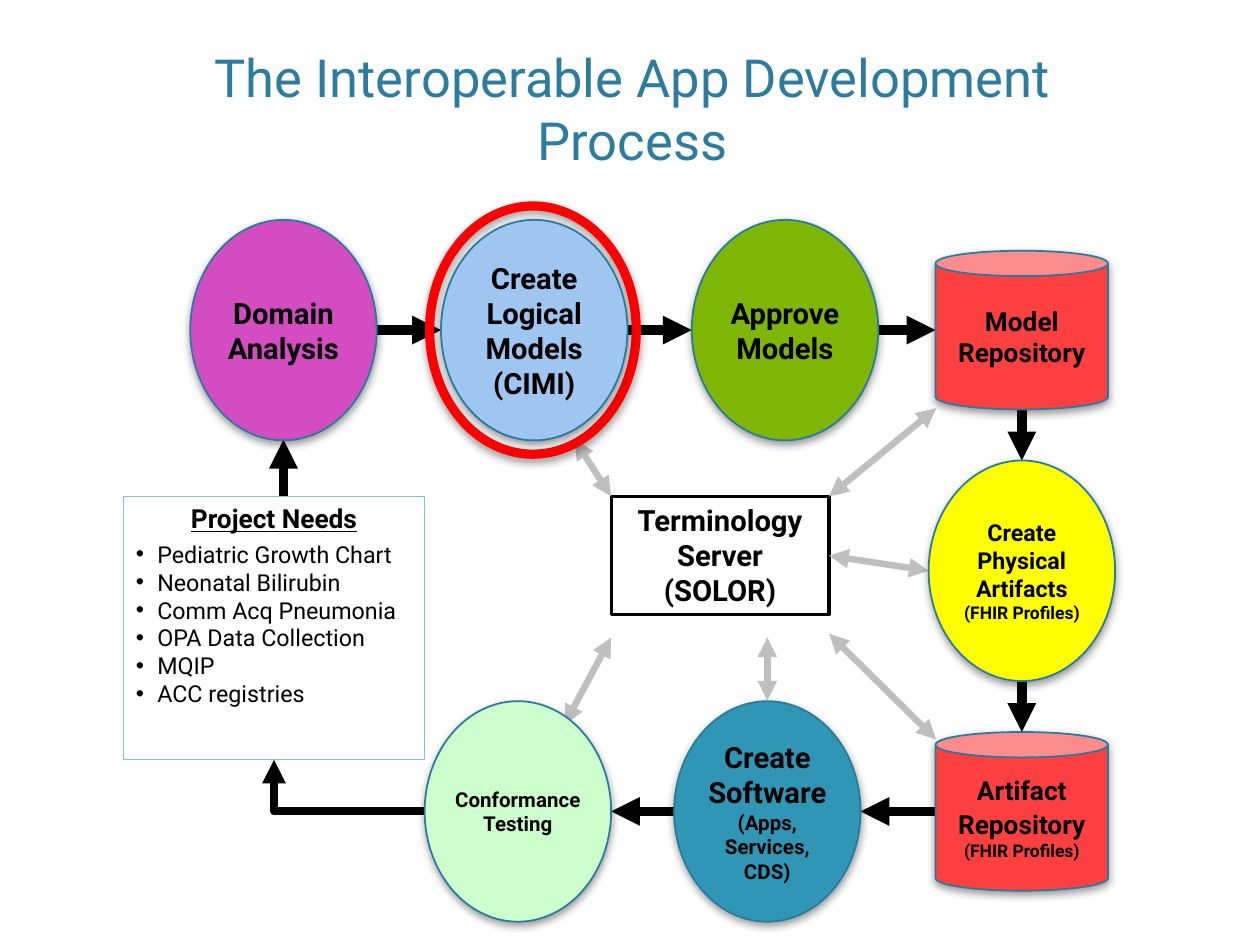
import pptx
import pptx.dml.color
import pptx.enum.shapes
import pptx.enum.text
import pptx.oxml.ns
import pptx.util
from lxml import etree

Inches, Pt = pptx.util.Inches, pptx.util.Pt
RGBColor = pptx.dml.color.RGBColor
SHAPES = pptx.enum.shapes.MSO_SHAPE
CONNECTORS = pptx.enum.shapes.MSO_CONNECTOR
ANCHORS = pptx.enum.text.MSO_ANCHOR
CENTER = pptx.enum.text.PP_ALIGN.CENTER
qn = pptx.oxml.ns.qn

# Style
FONT = "Roboto"
BLACK = RGBColor(0x00, 0x00, 0x00)
WHITE = RGBColor(0xFF, 0xFF, 0xFF)
GRAY = RGBColor(0xBF, 0xBF, 0xBF)
RED = RGBColor(0xFF, 0x00, 0x00)
TITLE_BLUE = RGBColor(0x2C, 0x7C, 0x9F)
OUTLINE_BLUE = RGBColor(0x28, 0x7A, 0x9E)
BOX_BLUE = RGBColor(0x7A, 0xC6, 0xDC)
PURPLE = RGBColor(0xD4, 0x4C, 0xC1)
SKY = RGBColor(0x9F, 0xC6, 0xF0)
GREEN = RGBColor(0x7E, 0xB6, 0x06)
CORAL = RGBColor(0xFF, 0x40, 0x40)
YELLOW = RGBColor(0xFF, 0xFF, 0x00)
TEAL = RGBColor(0x2F, 0x97, 0xB5)
MINT = RGBColor(0xCC, 0xFF, 0xCC)

# Content
TITLE = "The Interoperable App Development Process"
NEEDS_HEADING = "Project Needs"
NEEDS = ["Pediatric Growth Chart", "Neonatal Bilirubin", "Comm Acq Pneumonia",
         "OPA Data Collection", "MQIP", "ACC registries"]
TERMINOLOGY = ["Terminology", "Server", "(SOLOR)"]

TOP_ROW, MIDDLE_ROW, BOTTOM_ROW = 2.62, 4.53, 6.44
RIGHT_COLUMN = 8.11
OVAL, CAN = SHAPES.OVAL, SHAPES.CAN
SIZES = {OVAL: (1.48, 1.75), CAN: (1.37, 1.26)}

# Steps in order: kind, centre x, centre y, fill, runs of (text, size)
STEPS = [
    (OVAL, 2.25, TOP_ROW, PURPLE, [("Domain Analysis", 16.7)]),
    (OVAL, 4.24, TOP_ROW, SKY, [("Create Logical Models (CIMI)", 16.7)]),
    (OVAL, 6.23, TOP_ROW, GREEN, [("Approve Models", 16.7)]),
    (CAN, RIGHT_COLUMN, TOP_ROW, CORAL, [("Model Repository", 15)]),
    (OVAL, RIGHT_COLUMN, MIDDLE_ROW, YELLOW,
     [("Create Physical Artifacts ", 13.3), ("(FHIR Profiles)", 10)]),
    (CAN, RIGHT_COLUMN, BOTTOM_ROW, CORAL,
     [("Artifact Repository", 15), (" ", 16.7), ("(FHIR Profiles)", 10)]),
    (OVAL, 6.09, BOTTOM_ROW, TEAL,
     [("Create Software ", 16.7), ("(Apps, Services, CDS)", 11.7)]),
    (OVAL, 4.11, BOTTOM_ROW, MINT, [("Conformance Testing", 11.7)]),
]

# Two-way links between the steps and the terminology server
SERVER_LINKS = [
    ((4.56, 3.49), (4.85, 3.94)),
    ((7.43, 3.24), (6.58, 3.94)),
    ((4.85, 5.06), (4.48, 5.75)),
    ((6.09, 5.06), (6.09, 5.56)),
    ((7.43, 5.87), (6.58, 5.03)),
]


def add_run(paragraph, text, size, color=BLACK, bold=True):
    run = paragraph.add_run()
    run.text = text
    run.font.name, run.font.size, run.font.bold = FONT, Pt(size), bold
    run.font.color.rgb = color
    return run


def add_box(box, color, width):
    shape = slide.shapes.add_textbox(*map(Inches, box))
    shape.line.color.rgb = color
    shape.line.width = Pt(width)
    shape.text_frame.word_wrap = True
    return shape


def add_arrow(start, end, color, width, both=False, kind=CONNECTORS.STRAIGHT):
    connector = slide.shapes.add_connector(kind, *map(Inches, (*start, *end)))
    connector.line.color.rgb = color
    connector.line.width = Pt(width)
    line = connector.line._get_or_add_ln()
    for tag in ("a:headEnd", "a:tailEnd") if both else ("a:tailEnd",):
        etree.SubElement(line, qn(tag), type="triangle")
    etree.SubElement(connector._element.spPr, qn("a:effectLst"))
    return connector


def add_shadowed(kind, center_x, center_y, width, height, color, line_width):
    shape = slide.shapes.add_shape(kind, *map(Inches, (
        center_x - width / 2, center_y - height / 2, width, height)))
    shape.line.color.rgb = color
    shape.line.width = Pt(line_width)
    shape.shadow.inherit = False
    effects = shape._element.spPr.find(qn("a:effectLst"))
    shadow = etree.SubElement(effects, qn("a:outerShdw"), blurRad=str(Pt(5)),
                              dist=str(Pt(2)), dir="5400000", rotWithShape="0")
    shadow_color = etree.SubElement(shadow, qn("a:srgbClr"), val="000000")
    etree.SubElement(shadow_color, qn("a:alpha"), val="40000")
    return shape


def step_arrow(first, second):
    """Run from the edge of one step to the facing edge of the next."""
    (kind_a, ax, ay, *_), (kind_b, bx, by, *_) = first, second
    if ax == bx:
        return ((ax, ay + SIZES[kind_a][1] / 2), (bx, by - SIZES[kind_b][1] / 2))
    sign = 1 if bx > ax else -1
    return ((ax + sign * SIZES[kind_a][0] / 2, ay),
            (bx - sign * SIZES[kind_b][0] / 2, by))


presentation = pptx.Presentation()
presentation.slide_width, presentation.slide_height = Inches(10), Inches(7.5)
slide = presentation.slides.add_slide(presentation.slide_layouts[5])

# Title
title = slide.shapes.title
title.left, title.top, title.width, title.height = map(
    Inches, (1.08, -0.06, 7.88, 1.46))
title.fill.solid()
title.fill.fore_color.rgb = WHITE
frame = title.text_frame
frame.vertical_anchor = ANCHORS.BOTTOM
frame.margin_left = frame.margin_right = Inches(0.08)
frame.margin_top = frame.margin_bottom = Inches(0.04)
frame.paragraphs[0].alignment = CENTER
add_run(frame.paragraphs[0], TITLE, 30, TITLE_BLUE, bold=False)

# Project needs
needs_box = add_box((0.98, 3.94, 2.39, 2.09), BOX_BLUE, 0.75)
heading = needs_box.text_frame.paragraphs[0]
heading.alignment = CENTER
heading.space_after = Pt(3.3)
add_run(heading, NEEDS_HEADING, 15).font.underline = True
for need in NEEDS:
    paragraph = needs_box.text_frame.add_paragraph()
    properties = paragraph._p.get_or_add_pPr()
    properties.set("marL", str(Inches(0.17)))
    properties.set("indent", str(Inches(-0.17)))
    etree.SubElement(properties, qn("a:buFont"), typeface="Arial")
    etree.SubElement(properties, qn("a:buChar"), char="•")
    add_run(paragraph, need, 13.3, bold=False)

# Terminology server
server_box = add_box((4.85, 3.94, 1.73, 0.94), BLACK, 1.75)
frame = server_box.text_frame
frame.auto_size = pptx.enum.text.MSO_AUTO_SIZE.SHAPE_TO_FIT_TEXT
for index, text in enumerate(TERMINOLOGY):
    paragraph = frame.add_paragraph() if index else frame.paragraphs[0]
    paragraph.alignment = CENTER
    add_run(paragraph, text, 16.7)

# Arrows
for first, second in zip(STEPS, STEPS[1:]):
    add_arrow(*step_arrow(first, second), BLACK, 5.5)
add_arrow((2.25, 3.94), (2.25, 3.49), BLACK, 5.5)
for start, end in SERVER_LINKS:
    add_arrow(start, end, GRAY, 3.75, both=True)
add_arrow((7.37, MIDDLE_ROW), (6.58, 4.41), GRAY, 3.75,
          both=True).end_connect(server_box, 3)
feedback = add_arrow((3.38, BOTTOM_ROW), (2.18, 6.03), BLACK, 4.5,
                     kind=CONNECTORS.ELBOW)
feedback._element.spPr.find(qn("a:prstGeom")).set("prst", "bentConnector2")
feedback.end_connect(needs_box, 2)

# Highlight ring around the logical models step
ring = add_shadowed(OVAL, 4.23, TOP_ROW, 1.64, 1.97, RED, 5.25)
ring.fill.background()

# Steps
for kind, center_x, center_y, fill, runs in STEPS:
    shape = add_shadowed(kind, center_x, center_y, *SIZES[kind], OUTLINE_BLUE, 1)
    shape.fill.solid()
    shape.fill.fore_color.rgb = fill
    frame = shape.text_frame
    frame.word_wrap = True
    frame.vertical_anchor = ANCHORS.MIDDLE
    if kind == CAN:
        shape.adjustments[0] = 0.16
    else:
        frame.margin_left = frame.margin_right = 0
        frame.margin_top = frame.margin_bottom = 0
    frame.paragraphs[0].alignment = CENTER
    for text, size in runs:
        add_run(frame.paragraphs[0], text, size)

presentation.save("out.pptx")
